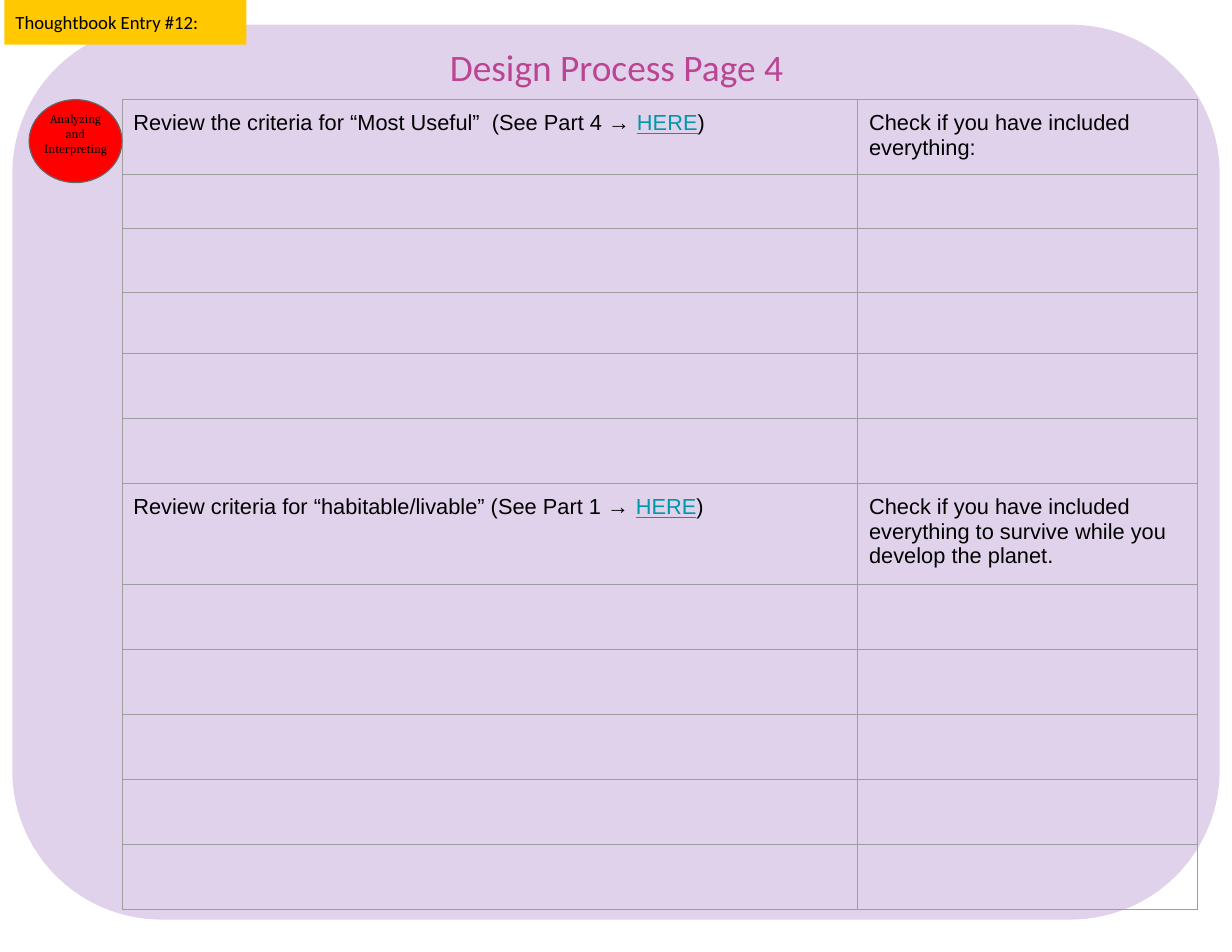
from lxml import etree
from pptx import Presentation
from pptx import util as u
from pptx.dml.color import RGBColor
from pptx.enum import shapes, text
from pptx.oxml.ns import qn

LILAC = RGBColor(0xE1, 0xD2, 0xEC)
MAGENTA = RGBColor(0xBB, 0x45, 0x92)
RED = RGBColor(0xFF, 0x00, 0x00)
YELLOW = RGBColor(0xFF, 0xC8, 0x00)
GRAY = RGBColor(0x66, 0x66, 0x66)
TEAL = RGBColor(0x00, 0x97, 0xA7)
BLACK = RGBColor(0, 0, 0)
GRID_LINE = "9E9E9E"

TITLE = "Design Process Page 4"
ENTRY = "Thoughtbook Entry #12:"
SKILL = "Analyzing and Interpreting"
LINK = "HERE"
# (criteria before the link, check prompt, header height, heights of blank rows)
SECTIONS = [
    ("Review the criteria for “Most Useful”  (See Part 4 → ",
     "Check if you have included everything:",
     0.67, [0.48, 0.57, 0.55, 0.58, 0.58]),
    ("Review criteria for “habitable/livable” (See Part 1 → ",
     "Check if you have included everything to survive while you develop the planet.",
     0.9, [0.58] * 5),
]
COLUMNS = [6.57, 3.03]
TABLE_LEFT, TABLE_TOP = 1.09, 0.89
BADGE = (0.26, TABLE_TOP, TABLE_LEFT - 0.26, 0.74)


def inches(box):
    return [u.Inches(length) for length in box]


def style(run, font, size, color):
    run.font.name, run.font.size = font, u.Pt(size)
    run.font.color.rgb = color


def set_margins(target, margin):
    target.margin_left = target.margin_right = u.Inches(margin)
    target.margin_top = target.margin_bottom = u.Inches(margin)


def add_panel(slide, kind, box, fill, line=None):
    shape = slide.shapes.add_shape(kind, *inches(box))
    shape.shadow.inherit = False
    shape.fill.solid()
    shape.fill.fore_color.rgb = fill
    if line is None:
        shape.line.fill.background()
    else:
        shape.line.color.rgb = line
        shape.line.width = u.Pt(0.75)
    return shape


def write(shape, words, font, size, color, align, anchor, margin=0.1):
    frame = shape.text_frame
    frame.word_wrap = True
    frame.vertical_anchor = anchor
    set_margins(frame, margin)
    frame.text = words
    frame.paragraphs[0].alignment = align
    style(frame.paragraphs[0].runs[0], font, size, color)


def set_borders(cell):
    properties = cell._tc.get_or_add_tcPr()
    for position, side in enumerate(("lnL", "lnR", "lnT", "lnB")):
        line = etree.Element(qn("a:" + side), w=str(u.Pt(0.75)))
        fill = etree.SubElement(line, qn("a:solidFill"))
        etree.SubElement(fill, qn("a:srgbClr"), val=GRID_LINE)
        properties.insert(position, line)


def fill_cell(cell, parts):
    set_margins(cell, 0.1)
    paragraph = cell.text_frame.paragraphs[0]
    for words in parts:
        run = paragraph.add_run()
        run.text = words
        is_link = words == LINK
        style(run, "Arial", 14, TEAL if is_link else BLACK)
        run.font.underline = is_link


def add_checklist(slide):
    heights = [h for *_, header, blanks in SECTIONS for h in [header] + blanks]
    box = (TABLE_LEFT, TABLE_TOP, sum(COLUMNS), sum(heights))
    table = slide.shapes.add_table(len(heights), len(COLUMNS), *inches(box)).table
    table.first_row = table.horz_banding = False
    for column, width in zip(table.columns, COLUMNS):
        column.width = u.Inches(width)
    for row, height in zip(table.rows, heights):
        row.height = u.Inches(height)
    for cell in table.iter_cells():
        cell.fill.background()
        set_borders(cell)
    header_row = 0
    for criteria, check, _, blanks in SECTIONS:
        fill_cell(table.cell(header_row, 0), [criteria, LINK, ")"])
        fill_cell(table.cell(header_row, 1), [check])
        header_row += 1 + len(blanks)


def main():
    presentation = Presentation()
    presentation.slide_width, presentation.slide_height = inches((11, 8.5))
    slide = presentation.slides.add_slide(presentation.slide_layouts[6])
    kinds, align, anchor = shapes.MSO_SHAPE, text.PP_ALIGN, text.MSO_ANCHOR

    add_panel(slide, kinds.ROUNDED_RECTANGLE, (0.11, 0.22, 10.78, 7.99), LILAC)
    title = slide.shapes.add_textbox(*inches((0.12, 0.26, 10.77, 0.65)))
    write(title, TITLE, "Calibri", 24, MAGENTA, align.CENTER, anchor.BOTTOM, 0.12)
    add_checklist(slide)
    add_panel(slide, kinds.OVAL, BADGE, RED, GRAY)
    skill = slide.shapes.add_textbox(*inches(BADGE))
    write(skill, SKILL, "Cambria", 8, BLACK, align.CENTER, anchor.TOP)
    entry = add_panel(slide, kinds.RECTANGLE, (0.04, 0, 2.16, 0.4), YELLOW)
    write(entry, ENTRY, "Calibri", 12, BLACK, align.LEFT, anchor.MIDDLE)

    presentation.save("out.pptx")


if __name__ == "__main__":
    main()
